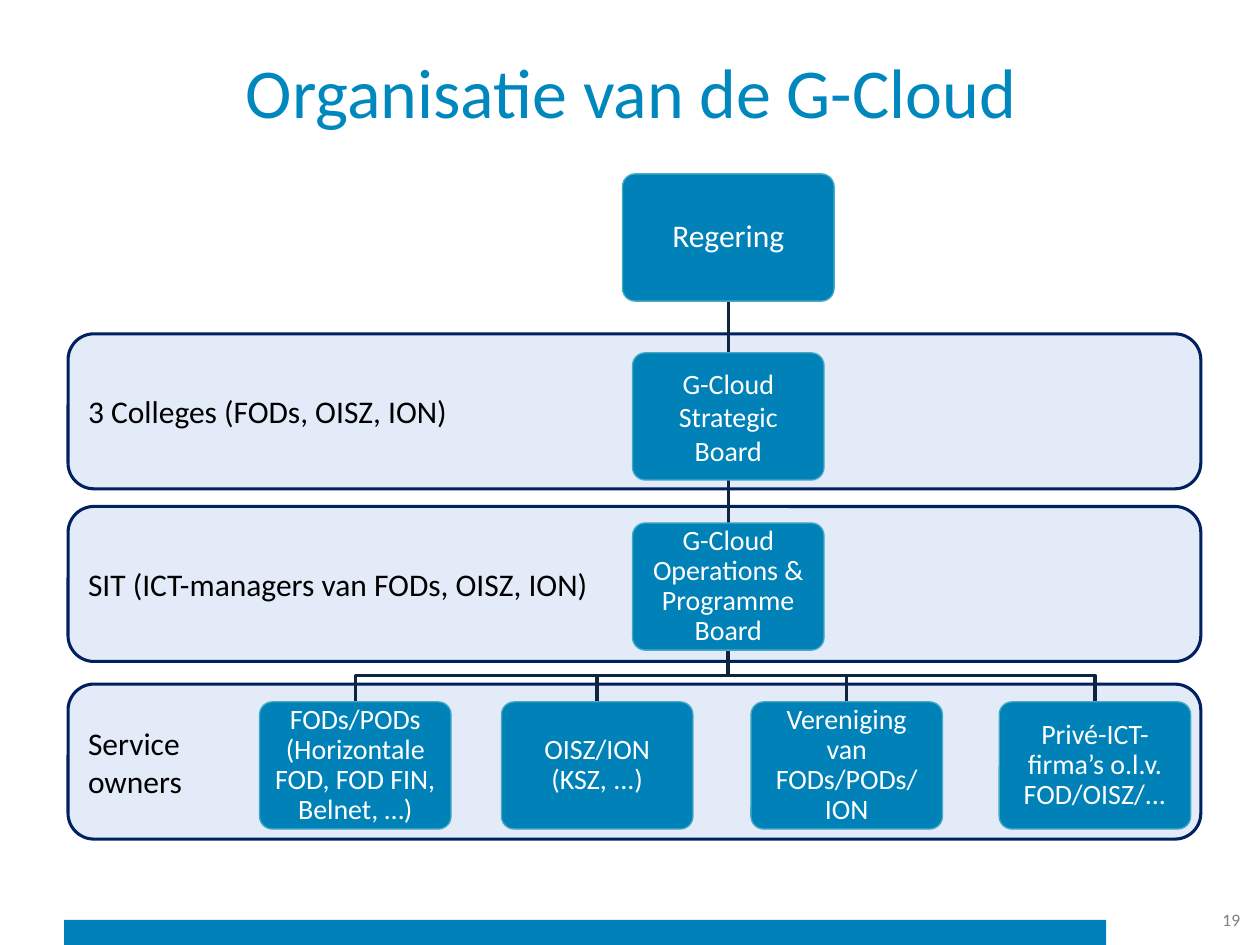
"""Build the G-Cloud organisation slide."""
import pptx
import pptx.dml.color
import pptx.enum.shapes
import pptx.enum.text
import pptx.oxml
import pptx.oxml.ns
import pptx.util
from dataclasses import dataclass

Inches = pptx.util.Inches
Pt = pptx.util.Pt
SHAPE = pptx.enum.shapes.MSO_SHAPE
ALIGN = pptx.enum.text.PP_ALIGN


@dataclass(frozen=True)
class Theme:
    font: str = "Calibri"
    title: str = "0087BE"
    bar: str = "0080BB"
    box: str = "0082B8"
    box_line: str = "46AAC5"
    band: str = "C6D9F1"
    band_line: str = "002060"
    link: str = "0F243E"
    dark: str = "000000"
    light: str = "FFFFFF"
    grey: str = "808080"
    title_size: int = 40
    label_size: int = 18
    box_size: int = 16
    number_size: int = 10


THEME = Theme()
TITLE = "Organisatie van de G-Cloud"
PAGE_NUMBER = "19"
BANDS = [
    (2.65, ["3 Colleges (FODs, OISZ, ION)"]),
    (4.02, ["SIT (ICT-managers van FODs, OISZ, ION)"]),
    (5.43, ["Service", "owners"]),
]
TRUNK = [
    ("Regering", 1.38, 1.68, THEME.label_size, 0.9),
    ("G-Cloud Strategic Board", 2.8, 1.52, THEME.box_size, 1.0),
    ("G-Cloud Operations & Programme Board", 4.15, 1.52, THEME.box_size, 0.9),
]
OWNERS = [
    ("FODs/PODs\n(Horizontale FOD, FOD FIN, Belnet, …)", 2.82),
    ("OISZ/ION (KSZ, ...)", 4.74),
    ("Vereniging van FODs/PODs/ ION", 6.72),
    ("Privé-ICT-firma’s o.l.v. FOD/OISZ/...", 8.69),
]
TRUNK_X = 5.78
BOX_WIDTH, BOX_HEIGHT = 1.52, 1.01
BAND_LEFT, BAND_WIDTH, BAND_HEIGHT = 0.54, 8.99, 1.23
OWNER_TOP, BRANCH_Y = 5.57, 5.36


def color(value):
    return pptx.dml.color.RGBColor.from_string(value)


def write(shape, lines, size, ink, align, spacing=1.0, inset=None):
    frame = shape.text_frame
    frame.word_wrap = True
    frame.vertical_anchor = pptx.enum.text.MSO_ANCHOR.MIDDLE
    if inset is not None:
        frame.margin_left = frame.margin_right = Inches(inset)
        frame.margin_top = frame.margin_bottom = Inches(inset)
    for index, line in enumerate(lines):
        para = frame.add_paragraph() if index else frame.paragraphs[0]
        para.alignment = align
        para.line_spacing = spacing
        for part_index, part in enumerate(line.split("\n")):
            if part_index:
                para.add_line_break()
            span = para.add_run()
            span.text = part
            span.font.name = THEME.font
            span.font.size = Pt(size)
            span.font.color.rgb = color(ink)


def add_label(page, place, text, size, ink, align):
    label = page.shapes.add_textbox(*map(Inches, place))
    write(label, [text], size, ink, align)


def add_block(page, kind, place, fill, line=None, width=0.75):
    block = page.shapes.add_shape(kind, *map(Inches, place))
    block.shadow.inherit = False
    block.fill.solid()
    block.fill.fore_color.rgb = color(fill)
    if line:
        block.line.color.rgb = color(line)
        block.line.width = Pt(width)
    else:
        block.line.fill.background()
    return block


def add_band(page, top, lines):
    place = (BAND_LEFT, top, BAND_WIDTH, BAND_HEIGHT)
    band = add_block(page, SHAPE.ROUNDED_RECTANGLE, place, THEME.band, THEME.band_line, 1.75)
    tint = band.fill._xPr.find(".//" + pptx.oxml.ns.qn("a:srgbClr"))
    tint.append(pptx.oxml.parse_xml(
        f'<a:alpha {pptx.oxml.ns.nsdecls("a")} val="50000"/>'))
    write(band, lines, THEME.label_size, THEME.dark, ALIGN.LEFT)


def add_box(page, text, center, top, width, size, spacing):
    place = (center - width / 2, top, width, BOX_HEIGHT)
    box = add_block(page, SHAPE.ROUNDED_RECTANGLE, place, THEME.box, THEME.box_line)
    box.adjustments[0] = 0.1
    write(box, [text], size, THEME.light, ALIGN.CENTER, spacing, 0.07)


def style_link(link):
    link.line.color.rgb = color(THEME.link)
    link.line.width = Pt(2)


def add_stem(page, top, bottom):
    stem = page.shapes.add_connector(
        pptx.enum.shapes.MSO_CONNECTOR.STRAIGHT,
        *map(Inches, (TRUNK_X, top, TRUNK_X, bottom)))
    stem._element.spPr.append(pptx.oxml.parse_xml(
        f'<a:effectLst {pptx.oxml.ns.nsdecls("a")}/>'))
    style_link(stem)


def add_branch(page, top, center):
    corners = [(TRUNK_X, BRANCH_Y), (center, BRANCH_Y), (center, OWNER_TOP)]
    path = page.shapes.build_freeform(Inches(TRUNK_X), Inches(top))
    path.add_line_segments([(Inches(x), Inches(y)) for x, y in corners], close=False)
    branch = path.convert_to_shape()
    branch.shadow.inherit = False
    branch.fill.background()
    style_link(branch)


def main():
    deck = pptx.Presentation()
    deck.slide_width, deck.slide_height = Inches(10), Inches(7.5)
    page = deck.slides.add_slide(deck.slide_layouts[6])
    add_block(page, SHAPE.RECTANGLE, (0.51, 7.3, 8.27, 0.2), THEME.bar)
    add_label(page, (0.51, 0.21, 9, 1.01), TITLE, THEME.title_size, THEME.title, ALIGN.CENTER)
    add_label(page, (9.12, 7.1, 0.82, 0.4), PAGE_NUMBER, THEME.number_size,
              THEME.grey, ALIGN.RIGHT)
    for top, lines in BANDS:
        add_band(page, top, lines)
    for upper, lower in zip(TRUNK, TRUNK[1:]):
        add_stem(page, upper[1] + BOX_HEIGHT, lower[1])
    for text, center in OWNERS:
        add_branch(page, TRUNK[-1][1] + BOX_HEIGHT, center)
    for text, top, width, size, spacing in TRUNK:
        add_box(page, text, TRUNK_X, top, width, size, spacing)
    for text, center in OWNERS:
        add_box(page, text, center, OWNER_TOP, BOX_WIDTH, THEME.box_size, 0.9)
    deck.save("out.pptx")


if __name__ == "__main__":
    main()
